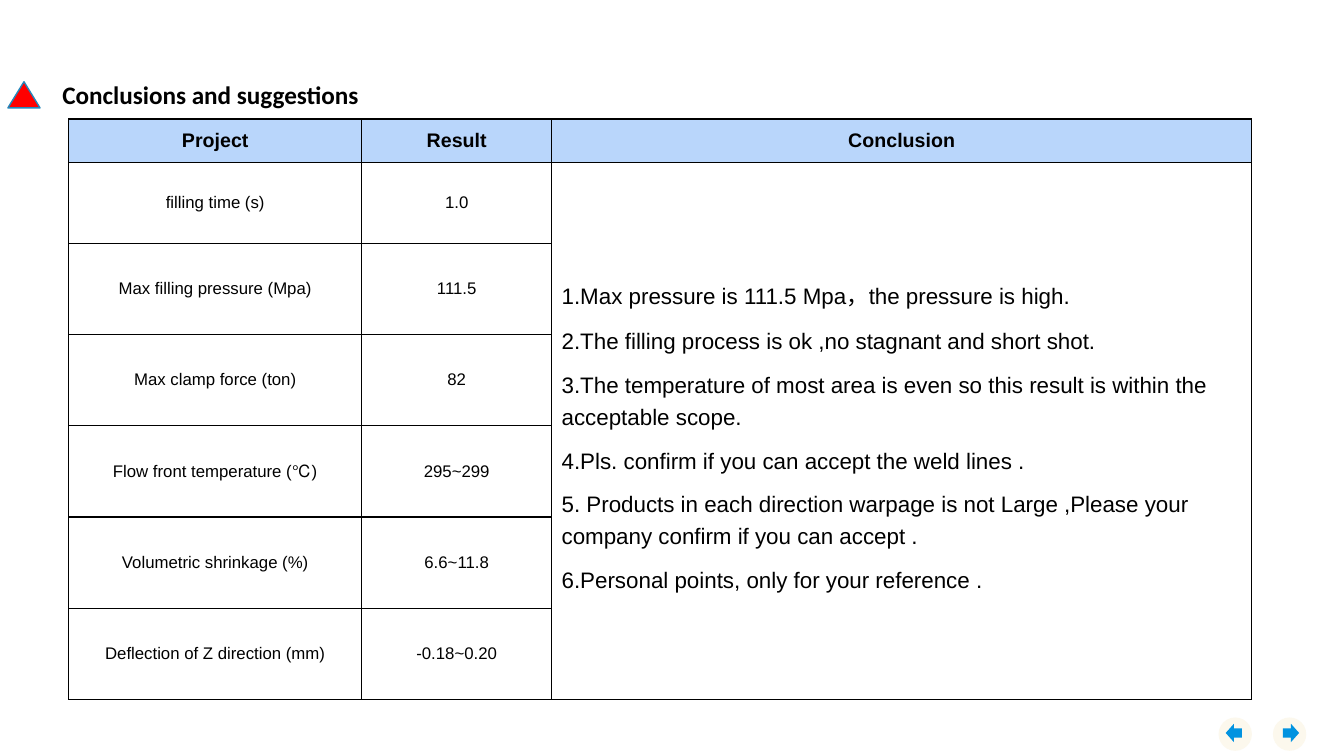
from lxml.etree import SubElement
from pptx import Presentation
from pptx.dml.color import RGBColor
from pptx.enum.shapes import MSO_SHAPE
from pptx.enum.text import MSO_ANCHOR, PP_ALIGN
from pptx.oxml.ns import qn
from pptx.util import Cm, Pt

COLORS = {
    "text": "000000",
    "border": "000000",
    "header": "B9D6FB",
    "marker": "FF0000",
    "marker_line": "2487BB",
    "button": "FCF8ED",
    "arrow": "0293E0",
}

HEADERS = ["Project", "Result", "Conclusion"]
RESULTS = [
    ("filling time (s)", "1.0"),
    ("Max filling pressure (Mpa)", "111.5"),
    ("Max clamp force (ton)", "82"),
    ("Flow front temperature (℃)", "295~299"),
    ("Volumetric shrinkage (%)", "6.6~11.8"),
    ("Deflection of Z direction (mm)", "-0.18~0.20"),
]
CONCLUSIONS = [
    "1.Max pressure is 111.5 Mpa，the pressure is high.",
    "2.The filling process is ok ,no stagnant and short shot.",
    "3.The temperature of most area is even so this result is within the acceptable scope.",
    "4.Pls. confirm if you can accept the weld lines .",
    "5. Products in each direction warpage is not Large ,Please your company confirm if you can accept .",
    "6.Personal points, only for your reference .",
]
COLUMN_WIDTHS = [7.39, 4.78, 17.65]
ROW_HEIGHTS = [1.1, 2.03] + [2.3] * 5


def color(name):
    return RGBColor.from_string(COLORS[name])


class SlideBuilder:
    def __init__(self, slide, font="Arial"):
        self.slide = slide
        self.font = font

    def shape(self, kind, left, top, width, height, fill, line=None):
        shape = self.slide.shapes.add_shape(kind, Cm(left), Cm(top), Cm(width), Cm(height))
        shape.shadow.inherit = False
        shape.fill.solid()
        shape.fill.fore_color.rgb = color(fill)
        if line:
            shape.line.color.rgb = color(line)
            shape.line.width = Pt(1)
        else:
            shape.line.fill.background()

    def run(self, paragraph, text, size, bold=False, font=None):
        run = paragraph.add_run()
        run.text = text
        run.font.name = font or self.font
        run.font.size = Pt(size)
        run.font.bold = bold
        run.font.color.rgb = color("text")

    def title(self, text, left, top, width, height):
        box = self.slide.shapes.add_textbox(Cm(left), Cm(top), Cm(width), Cm(height))
        box.text_frame.word_wrap = True
        self.run(box.text_frame.paragraphs[0], text, 18, bold=True, font="Calibri")

    def table(self, left, top, widths, heights):
        frame = self.slide.shapes.add_table(
            len(heights), len(widths), Cm(left), Cm(top), Cm(sum(widths)), Cm(sum(heights)))
        table = frame.table
        table.first_row = table.horz_banding = False
        for column, width in zip(table.columns, widths):
            column.width = Cm(width)
        for row, height in zip(table.rows, heights):
            row.height = Cm(height)
        for cell in table.iter_cells():
            self.borders(cell)
            cell.fill.background()
            cell.vertical_anchor = MSO_ANCHOR.MIDDLE
        return table

    def borders(self, cell):
        properties = cell._tc.get_or_add_tcPr()
        for side in ("a:lnL", "a:lnR", "a:lnT", "a:lnB"):
            line = SubElement(properties, qn(side), w=str(Pt(1)))
            fill = SubElement(line, qn("a:solidFill"))
            SubElement(fill, qn("a:srgbClr"), val=COLORS["border"])

    def label(self, cell, text, size=12, bold=False, fill=None):
        if fill:
            cell.fill.solid()
            cell.fill.fore_color.rgb = color(fill)
        paragraph = cell.text_frame.paragraphs[0]
        paragraph.alignment = PP_ALIGN.CENTER
        self.run(paragraph, text, size, bold)

    def statements(self, cell, texts):
        frame = cell.text_frame
        for index, text in enumerate(texts):
            paragraph = frame.add_paragraph() if index else frame.paragraphs[0]
            paragraph.line_spacing = 1.3
            paragraph.space_before = Pt(8)
            self.run(paragraph, text, 16)


def main():
    presentation = Presentation()
    presentation.slide_width, presentation.slide_height = Cm(33.87), Cm(19.05)
    builder = SlideBuilder(presentation.slides.add_slide(presentation.slide_layouts[6]))

    # Navigation buttons
    for button_left, arrow_left, arrow in (
            (32.08, 32.33, MSO_SHAPE.RIGHT_ARROW), (30.71, 30.89, MSO_SHAPE.LEFT_ARROW)):
        builder.shape(MSO_SHAPE.OVAL, button_left, 18.08, 0.84, 0.84, "button")
        builder.shape(arrow, arrow_left, 18.24, 0.41, 0.46, "arrow")

    # Results table
    table = builder.table(1.73, 3, COLUMN_WIDTHS, ROW_HEIGHTS)
    for column, header in enumerate(HEADERS):
        builder.label(table.cell(0, column), header, 14, bold=True, fill="header")
    for row, values in enumerate(RESULTS, start=1):
        for column, value in enumerate(values):
            builder.label(table.cell(row, column), value)

    # Conclusions beside all results
    table.cell(1, 2).merge(table.cell(len(RESULTS), 2))
    builder.statements(table.cell(1, 2), CONCLUSIONS)

    # Heading with marker
    builder.title("Conclusions and suggestions", 1.32, 1.88, 17.3, 1.02)
    builder.shape(MSO_SHAPE.ISOSCELES_TRIANGLE, 0.2, 2.06, 0.81, 0.66, "marker", "marker_line")

    presentation.save("out.pptx")


if __name__ == "__main__":
    main()
